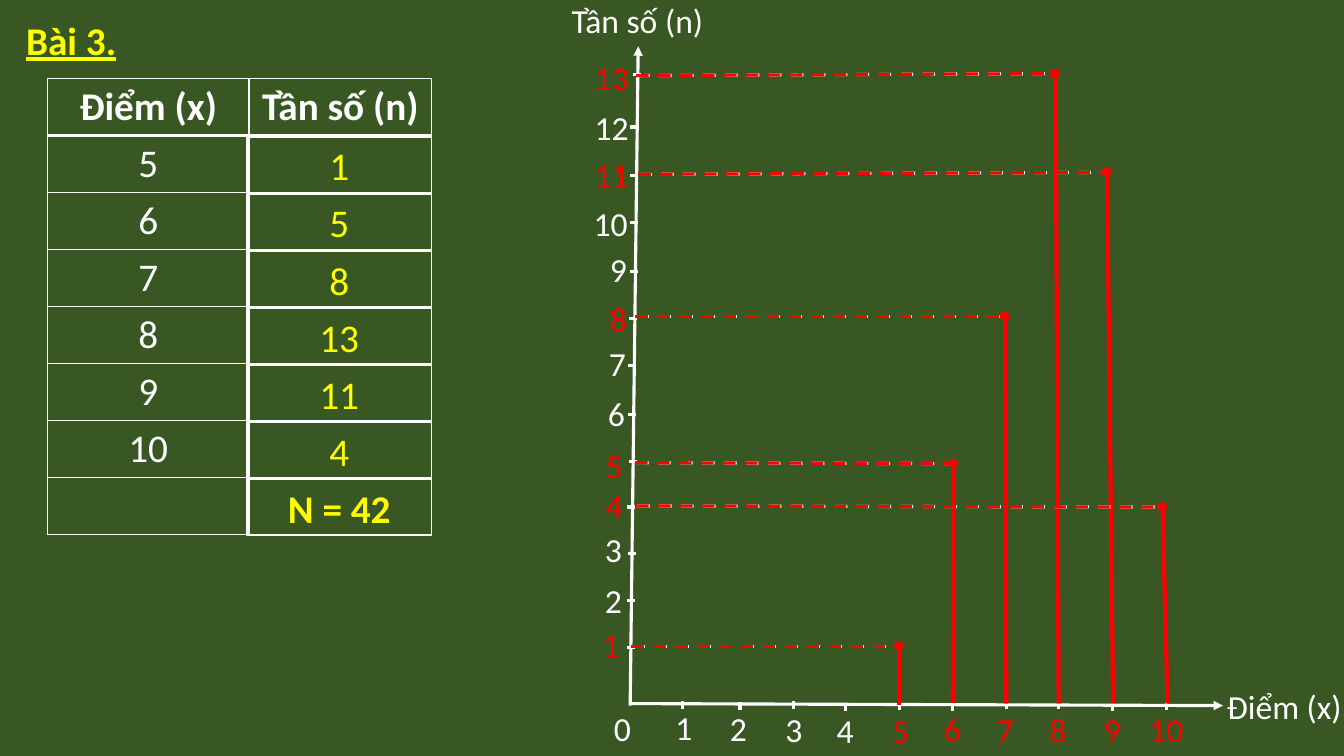
from lxml import etree
from pptx import Presentation
from pptx.dml.color import RGBColor
from pptx.enum.dml import MSO_LINE
from pptx.enum.shapes import MSO_CONNECTOR, MSO_SHAPE
from pptx.enum.text import MSO_ANCHOR, MSO_AUTO_SIZE, PP_ALIGN
from pptx.oxml.ns import qn
from pptx.util import Inches, Pt

STRAIGHT = MSO_CONNECTOR.STRAIGHT
RECTANGLE, OVAL = MSO_SHAPE.RECTANGLE, MSO_SHAPE.OVAL
DASH = MSO_LINE.DASH
TOP, MIDDLE = MSO_ANCHOR.TOP, MSO_ANCHOR.MIDDLE
CENTER, JUSTIFY, LEFT = PP_ALIGN.CENTER, PP_ALIGN.JUSTIFY, PP_ALIGN.LEFT
FIT_SHAPE, NO_FIT = MSO_AUTO_SIZE.SHAPE_TO_FIT_TEXT, MSO_AUTO_SIZE.NONE

FONT = "Calibri"
COLORS = {"board": "385723", "chalk": "FFFFFF", "answer": "FFFF00", "mark": "FF0000"}

HEADERS = ["Điểm (x)", "Tần số (n)"]
FREQUENCIES = {5: 1, 6: 5, 7: 8, 8: 13, 9: 11, 10: 4}
ROW_HEIGHT = 0.566
TICK = 0.08

# Each step is label left, label top, tick left, tick top.
FREQUENCY_SCALE = [
    (5.88, 6.14, 6.22, 6.42), (5.9, 5.7, 6.22, 5.96), (5.9, 5.2, 6.23, 5.49),
    (5.91, 4.76, 6.22, 5.03), (5.91, 4.36, 6.24, 4.58), (5.93, 3.85, 6.23, 4.11),
    (5.94, 3.35, 6.23, 3.63), (5.95, 2.91, 6.24, 3.16), (5.95, 2.42, 6.25, 2.69),
    (5.79, 1.96, 6.25, 2.21), (5.8, 1.48, 6.25, 1.74), (5.8, 1.01, 6.25, 1.26),
    (5.8, 0.52, 6.28, 0.74),
]
SCORE_SCALE = [
    (6.6, 6.96, 6.77, 6.95), (7.14, 6.97, 7.34, 6.96), (7.69, 6.98, 7.87, 6.95),
    (8.2, 6.99, 8.39, 6.97), (8.75, 6.99, 8.92, 6.96), (9.26, 6.97, 9.45, 6.97),
    (9.79, 6.98, 9.98, 6.95), (10.31, 6.98, 10.5, 6.95), (10.85, 6.98, 11.03, 6.97),
    (11.3, 6.98, 11.57, 6.96),
]
# Each bar is guide start, top point, foot.
BARS = [
    ((6.26, 6.41), (8.92, 6.41), (8.92, 6.99)),
    ((6.3, 4.59), (9.46, 4.6), (9.45, 6.97)),
    ((6.3, 3.14), (9.97, 3.14), (9.98, 6.98)),
    ((6.31, 0.75), (10.47, 0.73), (10.5, 6.98)),
    ((6.33, 1.73), (10.98, 1.71), (11.04, 6.98)),
    ((6.31, 5.02), (11.53, 5.03), (11.58, 6.98)),
]


def rgb(color):
    """Return the named colour."""
    return RGBColor.from_string(COLORS[color])


def write(frame, text, size, color, align, bold=False):
    """Fill a text frame with one formatted paragraph."""
    paragraph = frame.paragraphs[0]
    paragraph.text = text
    paragraph.alignment = align
    font = paragraph.font
    font.name, font.size, font.bold = FONT, Pt(size), bold
    font.color.rgb = rgb(color)
    return font


def add_line(shapes, start, end, color, width=2.25, dash=None, arrow=False):
    """Draw a straight line between two points."""
    line = shapes.add_connector(STRAIGHT, *map(Inches, start + end))
    line.line.color.rgb = rgb(color)
    line.line.width = Pt(width)
    if dash:
        line.line.dash_style = dash
    properties = line._element.spPr
    if arrow:
        etree.SubElement(properties.find(qn("a:ln")), qn("a:tailEnd"), type="triangle")
    etree.SubElement(properties, qn("a:effectLst"))


def add_label(shapes, text, left, top, width, color="chalk"):
    """Place an axis label."""
    label = shapes.add_textbox(*map(Inches, (left, top, width, 0.5)))
    frame = label.text_frame
    frame.word_wrap = False
    frame.auto_size = FIT_SHAPE
    write(frame, text, 24, color, LEFT)


def add_scale(shapes, steps, tick_size, marked):
    """Draw ticks and numbers, with the marked numbers highlighted."""
    for value, (left, top, tick_x, tick_y) in enumerate(steps, 1):
        add_line(shapes, (tick_x, tick_y),
                 (tick_x + tick_size[0], tick_y + tick_size[1]), "chalk")
        add_label(shapes, str(value), left, top, 0.37 if value < 10 else 0.54,
                  "mark" if value in marked else "chalk")


def set_borders(cell, widths):
    """Draw chalk borders of the given widths around a cell."""
    properties = cell._tc.get_or_add_tcPr()
    for side, width in zip("LRTB", widths):
        border = etree.SubElement(properties, qn(f"a:ln{side}"), w=str(Pt(width)))
        fill = etree.SubElement(border, qn("a:solidFill"))
        etree.SubElement(fill, qn("a:srgbClr"), val=COLORS["chalk"])


def add_frequency_table(shapes):
    """Build the score table with its frequency column left blank."""
    rows = [HEADERS] + [[str(score), ""] for score in FREQUENCIES] + [["", ""]]
    table = shapes.add_table(len(rows), 2, Inches(0.47), Inches(0.78), Inches(3.81),
                             Inches(ROW_HEIGHT * len(rows))).table
    table.horz_banding = False
    table.columns[0].width, table.columns[1].width = Inches(2), Inches(1.81)
    for index, texts in enumerate(rows):
        table.rows[index].height = Inches(ROW_HEIGHT)
        for cell, text in zip(table.rows[index].cells, texts):
            set_borders(cell, (1, 1, 3 if index == 1 else 1, 3 if index == 0 else 1))
            cell.fill.solid()
            cell.fill.fore_color.rgb = rgb("board")
            cell.margin_top = cell.margin_bottom = 0
            cell.vertical_anchor = MIDDLE
            if text:
                write(cell.text_frame, text, 28, "chalk", CENTER, index == 0)


def add_answer(shapes, text, top, bold):
    """Place a framed answer over the frequency column."""
    answer = shapes.add_shape(RECTANGLE, *map(Inches, (2.45, top, 1.83, 0.56)))
    answer.shadow.inherit = False
    answer.fill.background()
    answer.line.color.rgb = rgb("chalk")
    answer.line.width = Pt(1)
    answer.text_frame.vertical_anchor = MIDDLE
    write(answer.text_frame, text, 28, "answer", CENTER, bold)


def add_bar(shapes, guide, peak, foot):
    """Draw one bar with its dashed guide and end dot."""
    add_line(shapes, (guide[0] + 0.01, guide[1]), peak, "chalk", dash=DASH)
    add_line(shapes, guide, peak, "mark", dash=DASH)
    add_line(shapes, peak, foot, "mark", 3)
    dot = shapes.add_shape(OVAL, Inches(peak[0] - 0.05), Inches(peak[1] - 0.04),
                           Inches(0.09), Inches(0.07))
    dot.shadow.inherit = False
    dot.fill.solid()
    dot.fill.fore_color.rgb = dot.line.color.rgb = rgb("mark")
    dot.line.width = Pt(1)


def add_title(title):
    """Move and format the exercise heading."""
    title.left, title.top, title.width, title.height = map(Inches, (0.16, 0.11, 4.94, 0.57))
    frame = title.text_frame
    frame.auto_size = NO_FIT
    frame.vertical_anchor = TOP
    write(frame, "Bài 3.", 28, "answer", JUSTIFY, True).underline = True


def main():
    """Build the slide and save it."""
    deck = Presentation()
    deck.slide_width, deck.slide_height = Inches(13.33), Inches(7.5)
    slide = deck.slides.add_slide(deck.slide_layouts[5])
    slide.background.fill.solid()
    slide.background.fill.fore_color.rgb = rgb("board")
    shapes = slide.shapes
    add_title(shapes.title)
    add_frequency_table(shapes)

    frequency_axis = shapes.add_group_shape().shapes
    add_line(frequency_axis, (6.25, 7), (6.33, 0.46), "chalk", arrow=True)
    add_scale(frequency_axis, FREQUENCY_SCALE, (TICK, 0), FREQUENCIES.values())
    add_label(frequency_axis, HEADERS[1], 5.57, -0.05, 1.52)

    score_axis = shapes.add_group_shape().shapes
    add_line(score_axis, (6.25, 6.98), (12.13, 7), "chalk", arrow=True)
    add_label(score_axis, "0", 5.99, 6.97, 0.37)
    add_scale(score_axis, SCORE_SCALE, (0, TICK), FREQUENCIES)
    add_label(score_axis, HEADERS[0], 12.07, 6.76, 1.35)

    total = sum(FREQUENCIES.values())
    answers = [str(count) for count in FREQUENCIES.values()] + [f"N = {total}"]
    for index, answer in enumerate(answers):
        add_answer(shapes, answer, 1.36 + index * ROW_HEIGHT, index == len(FREQUENCIES))
    for bar in BARS:
        add_bar(shapes, *bar)
    deck.save("out.pptx")


if __name__ == "__main__":
    main()
